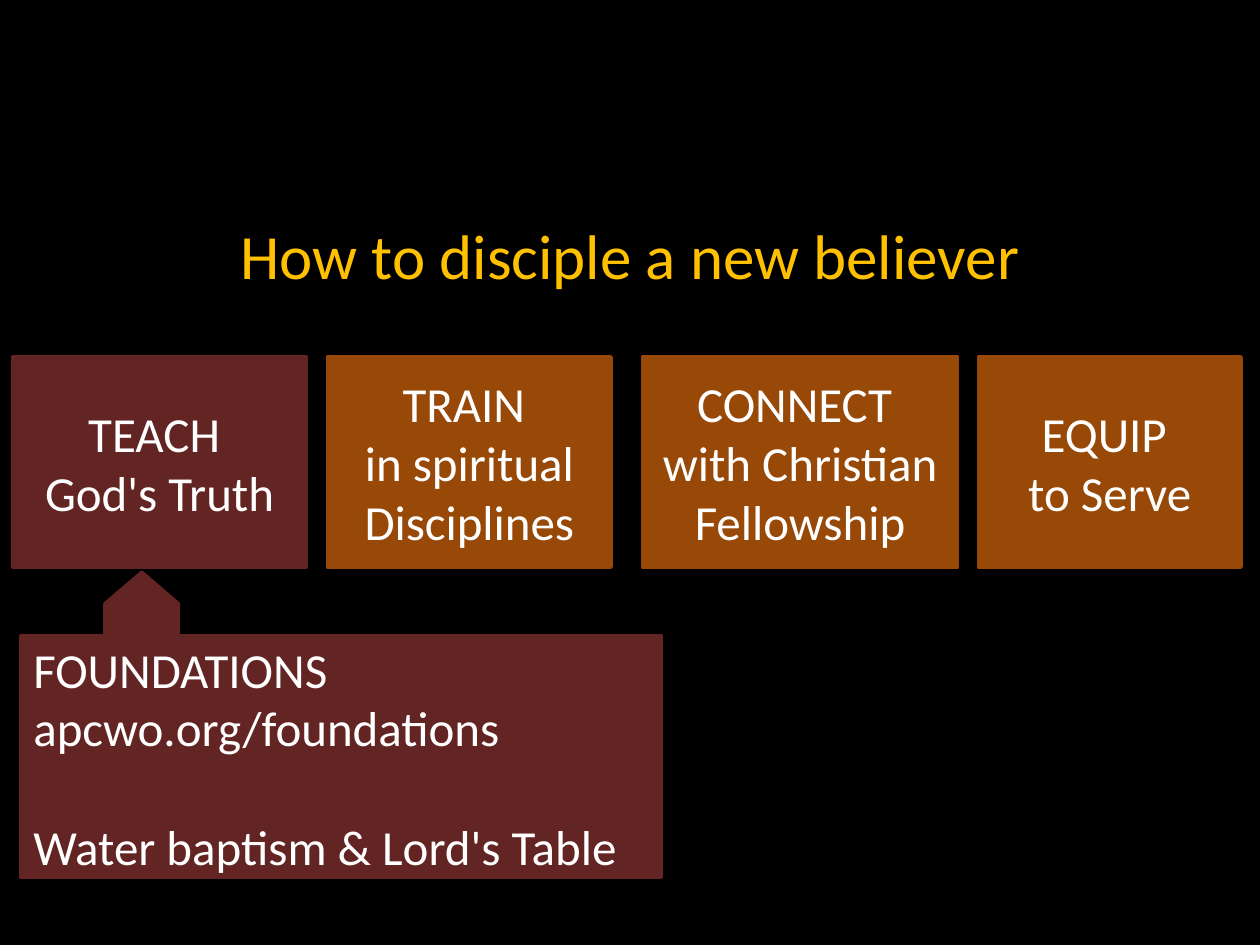
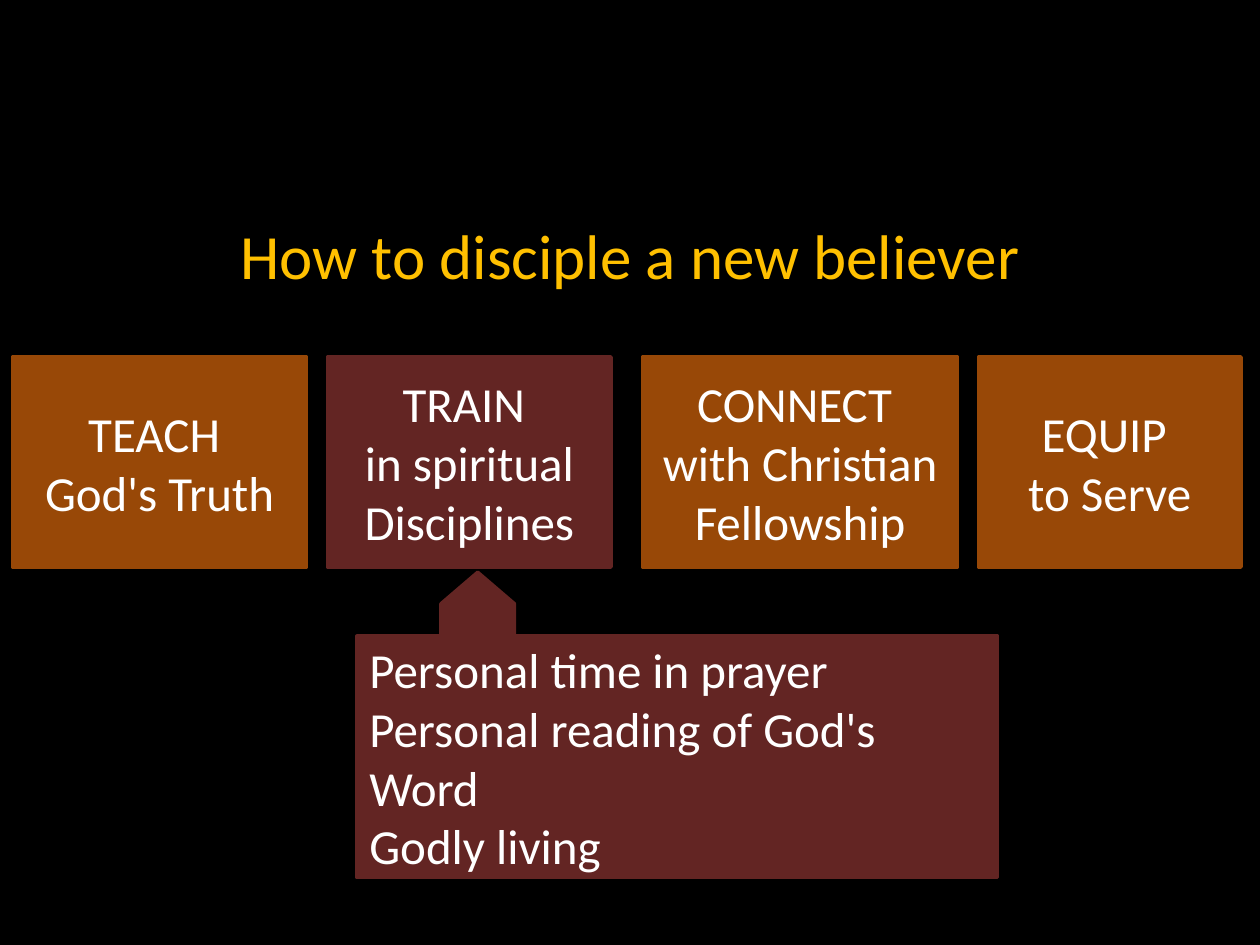
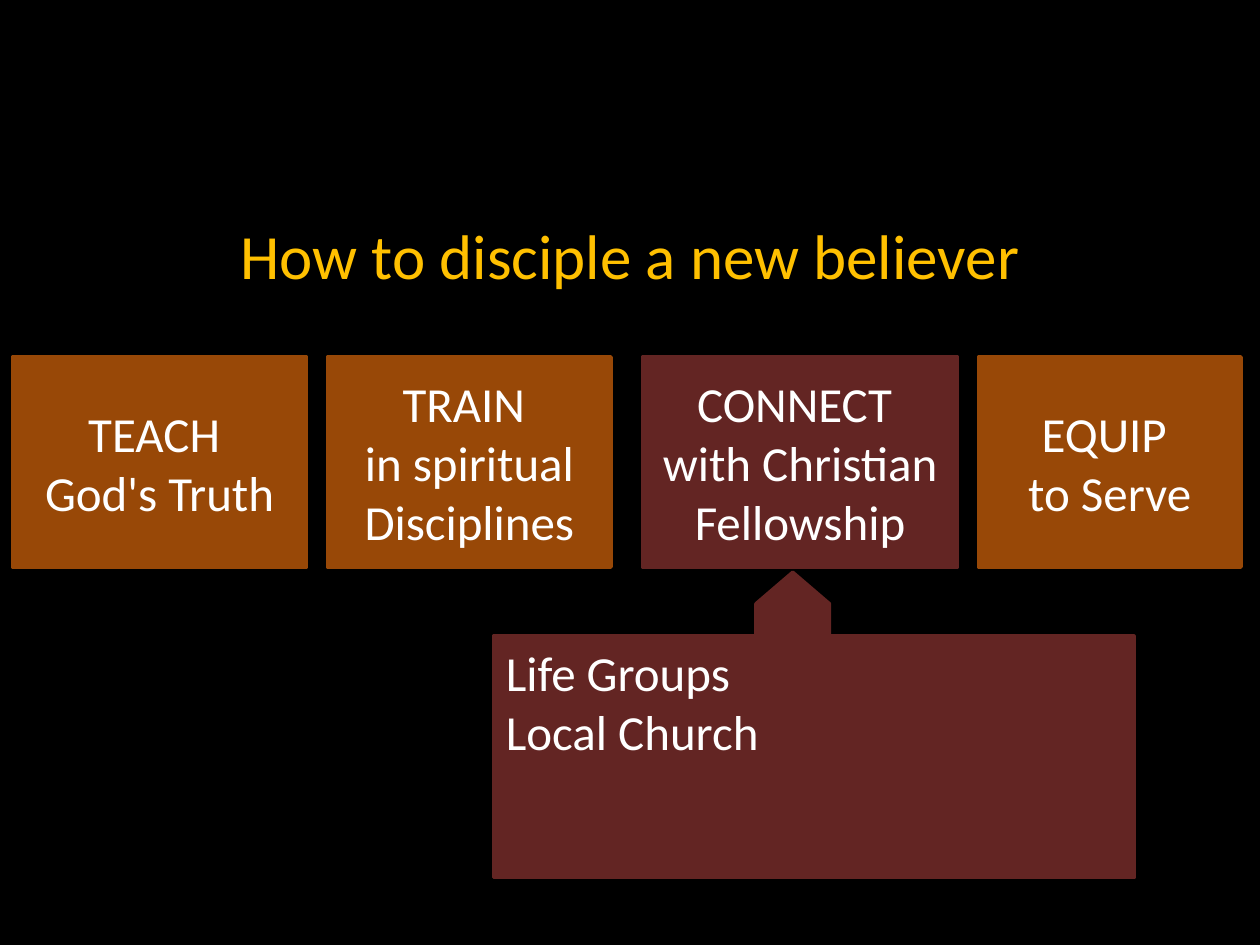
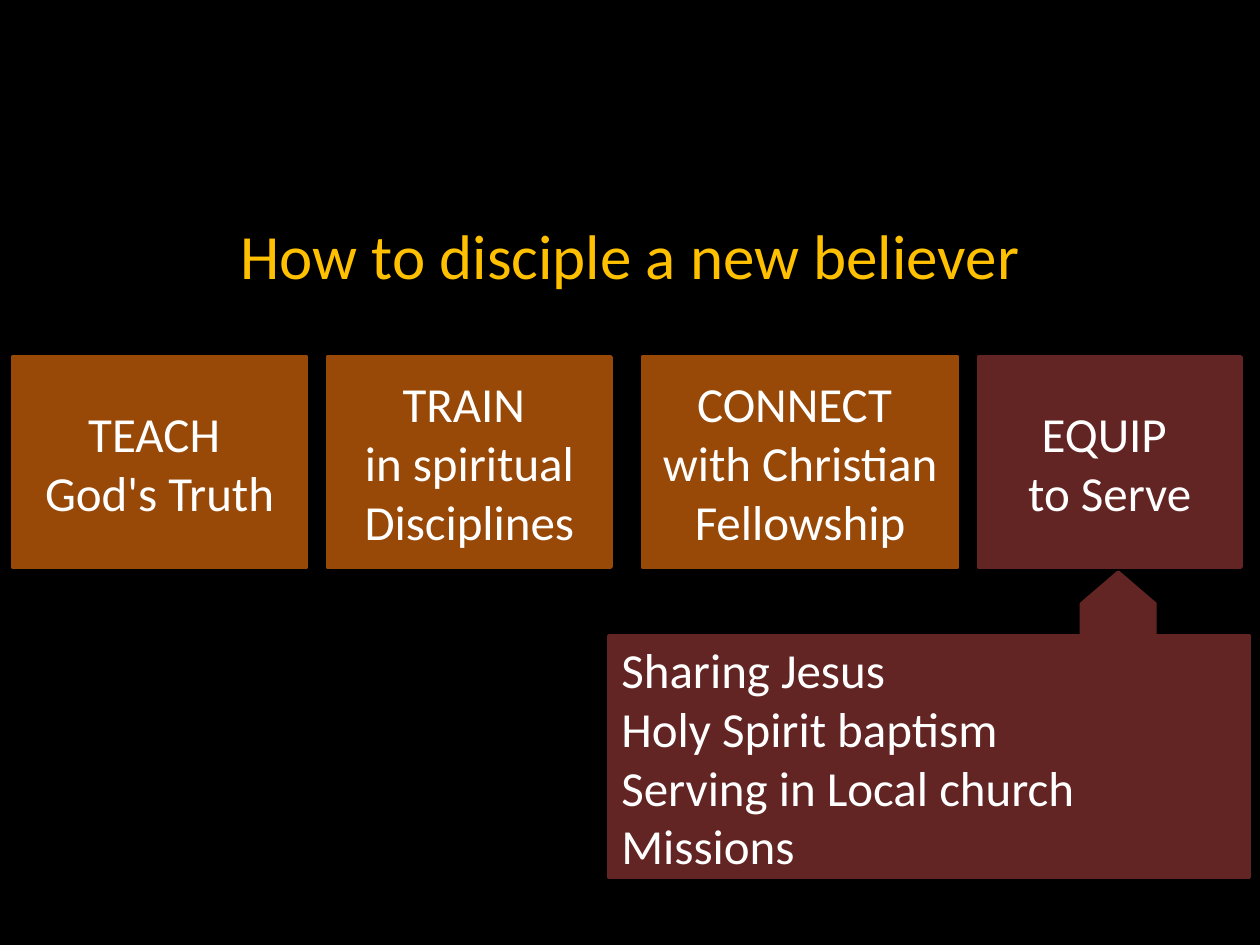
from pptx import Presentation
from pptx.dml.color import RGBColor
from pptx.enum.shapes import MSO_SHAPE
from pptx.enum.text import MSO_ANCHOR, MSO_AUTO_SIZE, PP_ALIGN
from pptx.util import Emu, Pt

PX = 7620  # EMU in one px, 120 px to the inch
COLORS = {
    "background": "000000",
    "title": "FFC000",
    "step": "984807",
    "active": "632523",
    "text": "FFFFFF",
}
FONT = "Calibri"
TITLE = "How to disciple a new believer"
TEXT_SIZE = 28
BLANK_LINE = 34  # points, the height of one line of text

# Steps: left, width, lines
STEP_TOP, STEP_HEIGHT = 340, 200
STEPS = [
    (12, 280, ["TEACH ", "God's Truth"]),
    (312, 270, ["TRAIN ", "in spiritual Disciplines"]),
    (612, 300, ["CONNECT ", "with Christian Fellowship"]),
    (932, 250, ["EQUIP ", "to Serve"]),
]

# Details of each step: panel left, pointer left, anchor, groups of lines
DETAILS = [
    (20, 105, MSO_ANCHOR.MIDDLE,
     [["FOUNDATIONS", "apcwo.org/foundations"], ["Water baptism & Lord's Table"]]),
    (340, 425, MSO_ANCHOR.MIDDLE,
     [["Personal time in prayer", "Personal reading of God's Word", "Godly living"]]),
    (470, 725, MSO_ANCHOR.TOP,
     [["Life Groups", "Local Church"]]),
    (580, 1035, MSO_ANCHOR.MIDDLE,
     [["Sharing Jesus", "Holy Spirit baptism", "Serving in Local church", "Missions"]]),
]


def px(length):
    return Emu(length * PX)


def color(name):
    return RGBColor.from_string(COLORS[name])


def style_paragraph(para, size, color_name, align):
    para.alignment = align
    para.font.name = FONT
    para.font.size = Pt(size)
    para.font.color.rgb = color(color_name)


def write_groups(box, groups, align, anchor):
    """Write groups of lines, parted by the height of one line."""
    frame = box.text_frame
    frame.word_wrap = True
    frame.vertical_anchor = anchor
    frame.text = "\n".join(line for group in groups for line in group)
    for para in frame.paragraphs:
        style_paragraph(para, TEXT_SIZE, "text", align)
    start = 0
    for group in groups[:-1]:
        start += len(group)
        frame.paragraphs[start].space_before = Pt(BLANK_LINE)


def add_block(page, kind, left, top, width, height, color_name):
    block = page.shapes.add_shape(kind, px(left), px(top), px(width), px(height))
    block.shadow.inherit = False
    block.fill.solid()
    block.fill.fore_color.rgb = color(color_name)
    block.line.color.rgb = color(color_name)
    block.line.width = Pt(2)
    return block


def add_title(page):
    title = page.shapes.title
    title.left, title.top, title.width, title.height = px(0), px(200), px(1200), px(85)
    title.text_frame.text = TITLE
    title.text_frame.vertical_anchor = MSO_ANCHOR.TOP
    title.text_frame.auto_size = MSO_AUTO_SIZE.SHAPE_TO_FIT_TEXT
    style_paragraph(title.text_frame.paragraphs[0], 36, "title", PP_ALIGN.CENTER)


def add_steps(page, active):
    for index, (left, width, lines) in enumerate(STEPS):
        color_name = "active" if index == active else "step"
        step = add_block(page, MSO_SHAPE.RECTANGLE, left, STEP_TOP, width,
                         STEP_HEIGHT, color_name)
        write_groups(step, [lines], PP_ALIGN.CENTER, MSO_ANCHOR.MIDDLE)


def add_details(page, panel_left, pointer_left, anchor, groups):
    panel = add_block(page, MSO_SHAPE.FLOWCHART_PROCESS, panel_left, 606, 610, 230, "active")
    write_groups(panel, groups, PP_ALIGN.LEFT, anchor)
    pointer = add_block(page, MSO_SHAPE.PENTAGON, pointer_left, STEP_TOP + STEP_HEIGHT,
                        60, 70, "active")
    pointer.rotation = 270


def main():
    deck = Presentation()
    deck.slide_width, deck.slide_height = px(1200), px(900)
    backdrop = deck.slide_master.background.fill
    backdrop.solid()
    backdrop.fore_color.rgb = color("background")

    title_only = deck.slide_layouts[5]
    for active, details in enumerate(DETAILS):
        page = deck.slides.add_slide(title_only)
        add_title(page)
        add_steps(page, active)
        add_details(page, *details)
    deck.save("out.pptx")


if __name__ == "__main__":
    main()
